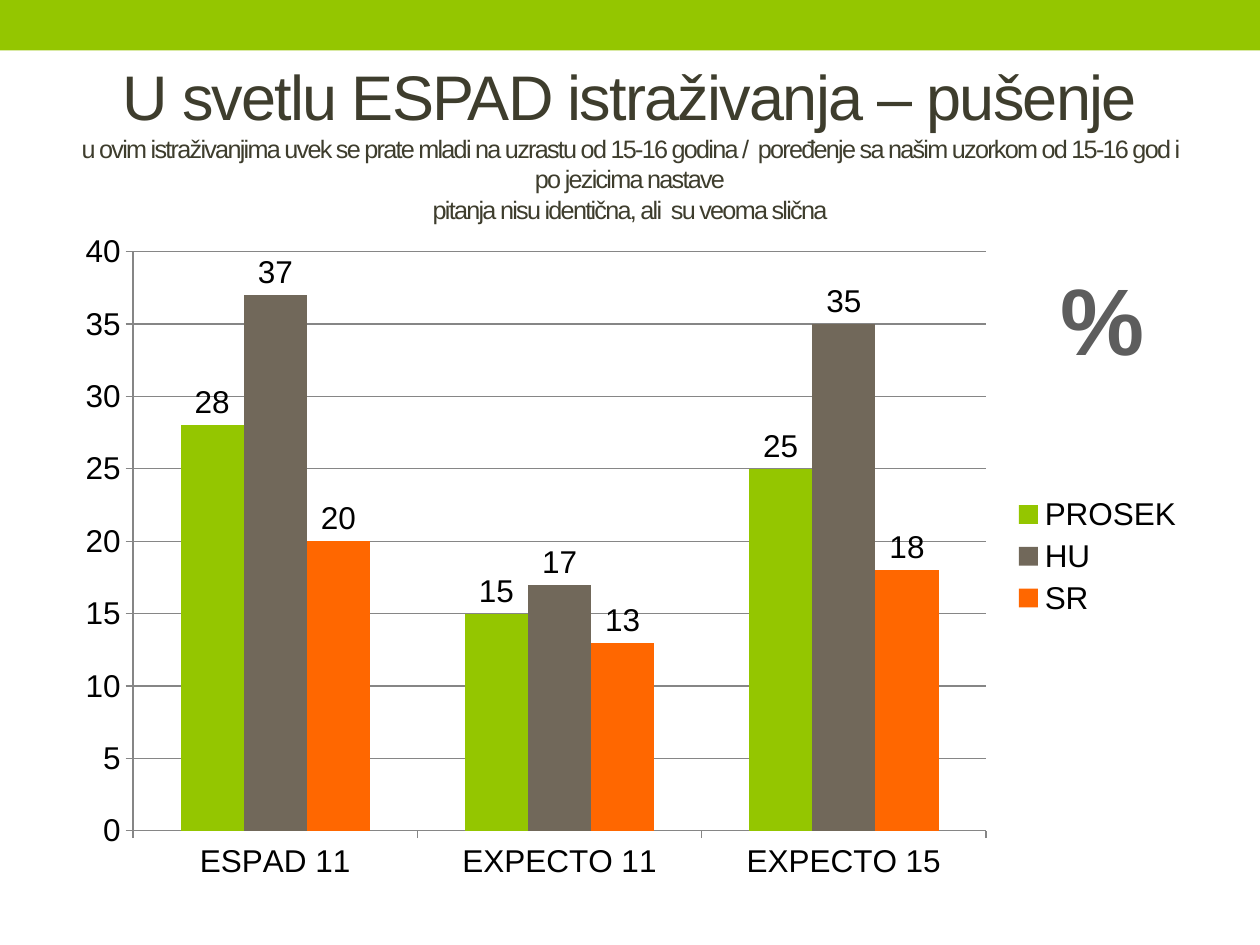
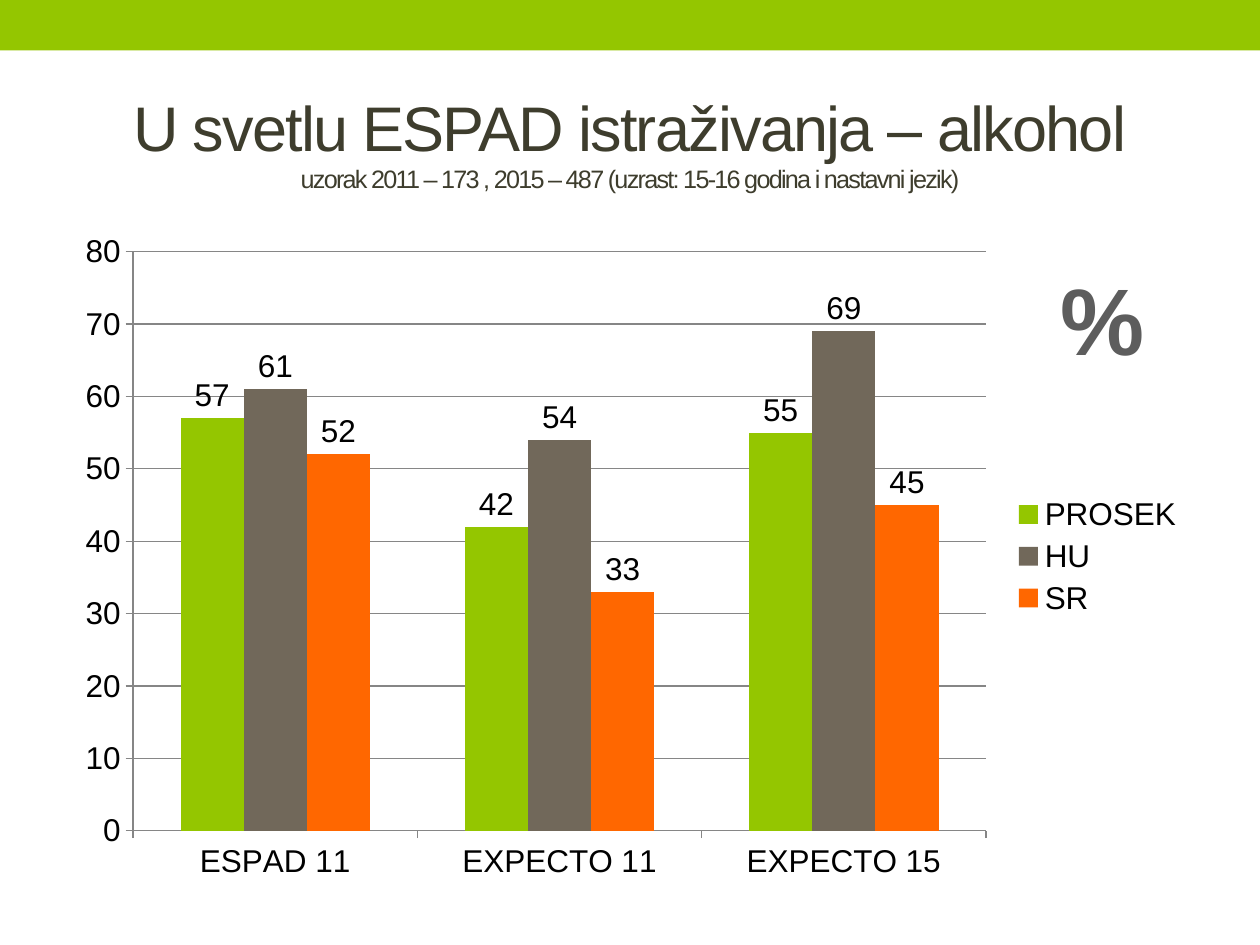
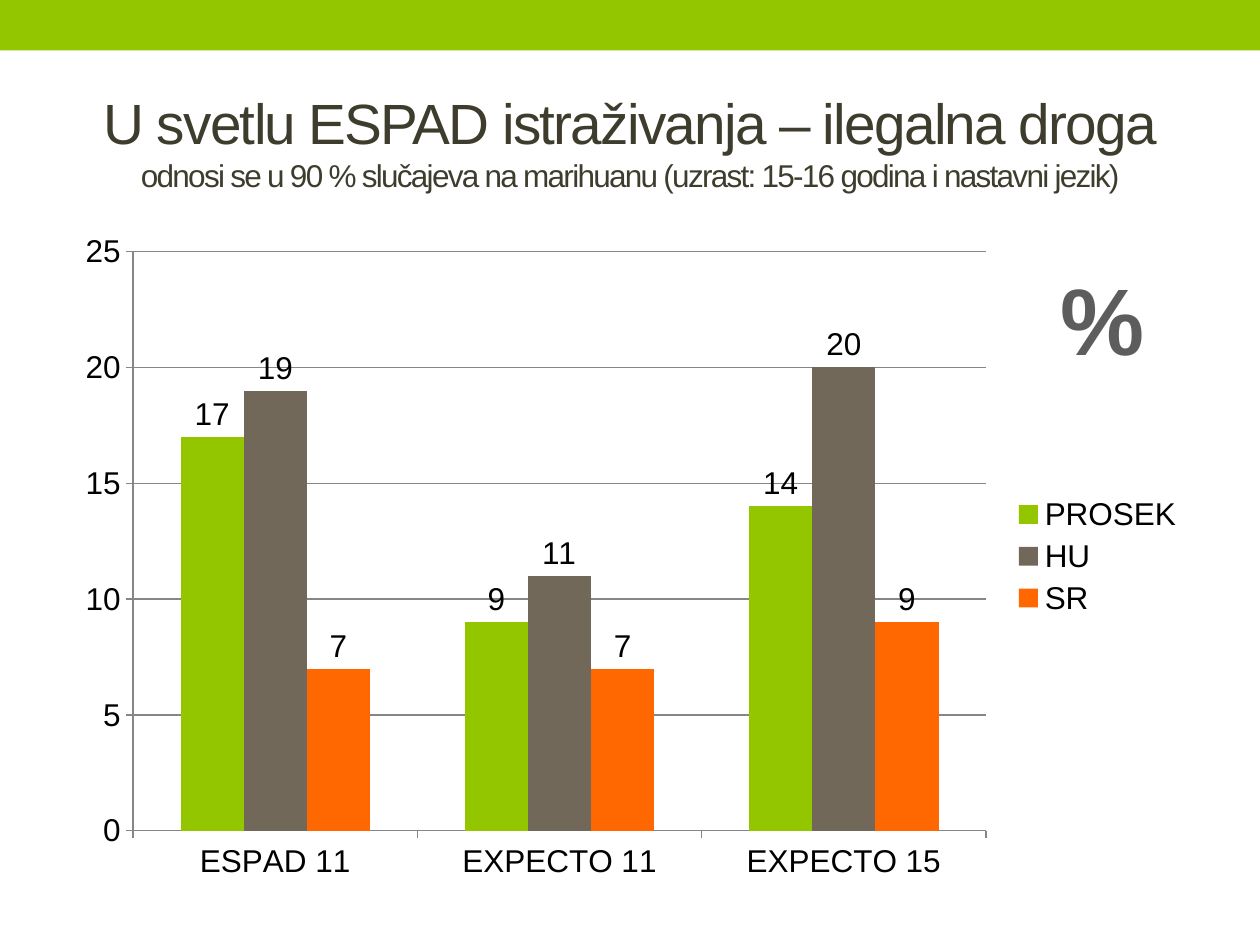
"""Build three slides that compare ESPAD and EXPECTO survey results."""
from pptx import Presentation
from pptx.chart.data import CategoryChartData
from pptx.dml.color import RGBColor
from pptx.enum.chart import XL_CHART_TYPE, XL_LABEL_POSITION, XL_LEGEND_POSITION, XL_TICK_MARK
from pptx.enum.shapes import MSO_SHAPE
from pptx.enum.text import MSO_ANCHOR, MSO_AUTO_SIZE, PP_ALIGN
from pptx.util import Inches, Pt

COLORS = {"green": "94C600", "brown": "71685A", "orange": "FF6700",
          "title": "3E3D2D", "percent": "5D5D5D", "text": "000000", "grid": "868686"}
FONT = "Arial"
CATEGORIES = ["ESPAD 11", "EXPECTO 11", "EXPECTO 15"]
SERIES = {"PROSEK": "green", "HU": "brown", "SR": "orange"}
TITLE_BOX = (0.5, 0.58, 9, 1.08)
CHART_BOX = (0.5, 1.75, 9, 5.33)
PERCENT_BOX = (8.31, 2.02, 0.88, 1.01)

SLIDES = [
    {"title": "U svetlu ESPAD istraživanja – pušenje",
     "subtitle": "u ovim istraživanjima uvek se prate mladi na uzrastu od 15-16 godina /  "
                 "poređenje sa našim uzorkom od 15-16 god i po jezicima nastave\v"
                 "pitanja nisu identična, ali  su veoma slična",
     "sizes": (36, 14.4), "maximum": 40, "step": 5,
     "values": [(28, 15, 25), (37, 17, 35), (20, 13, 18)]},
    {"title": "U svetlu ESPAD istraživanja – alkohol",
     "subtitle": "uzorak 2011 – 173 , 2015 – 487 (uzrast: 15-16 godina i nastavni jezik)",
     "sizes": (36, 14.4), "maximum": 80, "step": 10,
     "values": [(57, 42, 55), (61, 54, 69), (52, 33, 45)]},
    {"title": "U svetlu ESPAD istraživanja – ilegalna droga",
     "subtitle": "odnosi se u 90 % slučajeva na marihuanu (uzrast: 15-16 godina i nastavni jezik)",
     "sizes": (32.4, 18), "maximum": 25, "step": 5,
     "values": [(17, 9, 14), (19, 11, 20), (7, 7, 9)]},
]


def set_attrs(obj, **values):
    """Set each named attribute of an object."""
    for name, value in values.items():
        setattr(obj, name, value)


def rgb(name):
    """Return a palette colour."""
    return RGBColor.from_string(COLORS[name])


def inches(box):
    """Convert a box of inches to lengths."""
    return [Inches(v) for v in box]


def style_font(font, size, color, bold=False):
    """Apply the deck font with a size and colour."""
    set_attrs(font, name=FONT, size=Pt(size), bold=bold)
    font.color.rgb = rgb(color)


def add_master_band(prs, slide):
    """Put the green top band on the slide master."""
    sp = slide.shapes.add_shape(MSO_SHAPE.RECTANGLE, 0, 0, prs.slide_width, Inches(0.4))
    sp.shadow.inherit = False
    sp.fill.solid()
    sp.fill.fore_color.rgb = rgb("green")
    sp.line.fill.background()
    prs.slide_master.shapes.element.insert(2, sp.element)


def format_title(slide, title, subtitle, sizes):
    """Place the title and write its large and small lines."""
    sp = slide.shapes.title
    set_attrs(sp, **dict(zip(("left", "top", "width", "height"), inches(TITLE_BOX))))
    tf = sp.text_frame
    set_attrs(tf, word_wrap=True, auto_size=MSO_AUTO_SIZE.NONE,
              vertical_anchor=MSO_ANCHOR.MIDDLE)
    tf.text = f"{title}\v{subtitle}"
    p = tf.paragraphs[0]
    p.alignment = PP_ALIGN.CENTER
    for i, r in enumerate(p.runs):
        style_font(r.font, sizes[min(i, 1)], "title")
        r.font._element.set("spc", "-100")


def format_axis(axis):
    """Give an axis outside ticks and a grey line."""
    set_attrs(axis, major_tick_mark=XL_TICK_MARK.OUTSIDE, minor_tick_mark=XL_TICK_MARK.NONE)
    format_line(axis.format.line)


def format_line(line):
    """Draw a thin grey line."""
    line.color.rgb = rgb("grid")
    line.width = Pt(0.75)


def add_column_chart(slide, values, maximum, step):
    """Add the clustered columns with value labels and a legend."""
    data = CategoryChartData()
    data.categories = CATEGORIES
    for name, row in zip(SERIES, values):
        data.add_series(name, row)
    chart = slide.shapes.add_chart(
        XL_CHART_TYPE.COLUMN_CLUSTERED, *inches(CHART_BOX), data).chart
    style_font(chart.font, 18, "text")
    set_attrs(chart, has_title=False, has_legend=True)
    set_attrs(chart.legend, position=XL_LEGEND_POSITION.RIGHT, include_in_layout=False)
    for axis in (chart.category_axis, chart.value_axis):
        format_axis(axis)
    set_attrs(chart.value_axis, minimum_scale=0, maximum_scale=maximum, major_unit=step)
    format_line(chart.value_axis.major_gridlines.format.line)
    plot = chart.plots[0]
    set_attrs(plot, gap_width=150, overlap=0, vary_by_categories=False)
    for series, color in zip(plot.series, SERIES.values()):
        series.format.fill.solid()
        series.format.fill.fore_color.rgb = rgb(color)
        set_attrs(series.data_labels, show_value=True, position=XL_LABEL_POSITION.OUTSIDE_END)


def add_percent_sign(slide):
    """Add the large percent sign above the legend."""
    tf = slide.shapes.add_textbox(*inches(PERCENT_BOX)).text_frame
    set_attrs(tf, word_wrap=False, auto_size=MSO_AUTO_SIZE.SHAPE_TO_FIT_TEXT)
    p = tf.paragraphs[0]
    p.alignment = PP_ALIGN.CENTER
    r = p.add_run()
    r.text = "%"
    style_font(r.font, 54, "percent", bold=True)


def main():
    """Build and save the deck."""
    prs = Presentation()
    set_attrs(prs, slide_width=Inches(10), slide_height=Inches(7.5))
    for i, content in enumerate(SLIDES):
        slide = prs.slides.add_slide(prs.slide_layouts[5])
        if i == 0:
            add_master_band(prs, slide)
        format_title(slide, content["title"], content["subtitle"], content["sizes"])
        add_column_chart(slide, content["values"], content["maximum"], content["step"])
        add_percent_sign(slide)
    prs.save("out.pptx")


if __name__ == "__main__":
    main()
